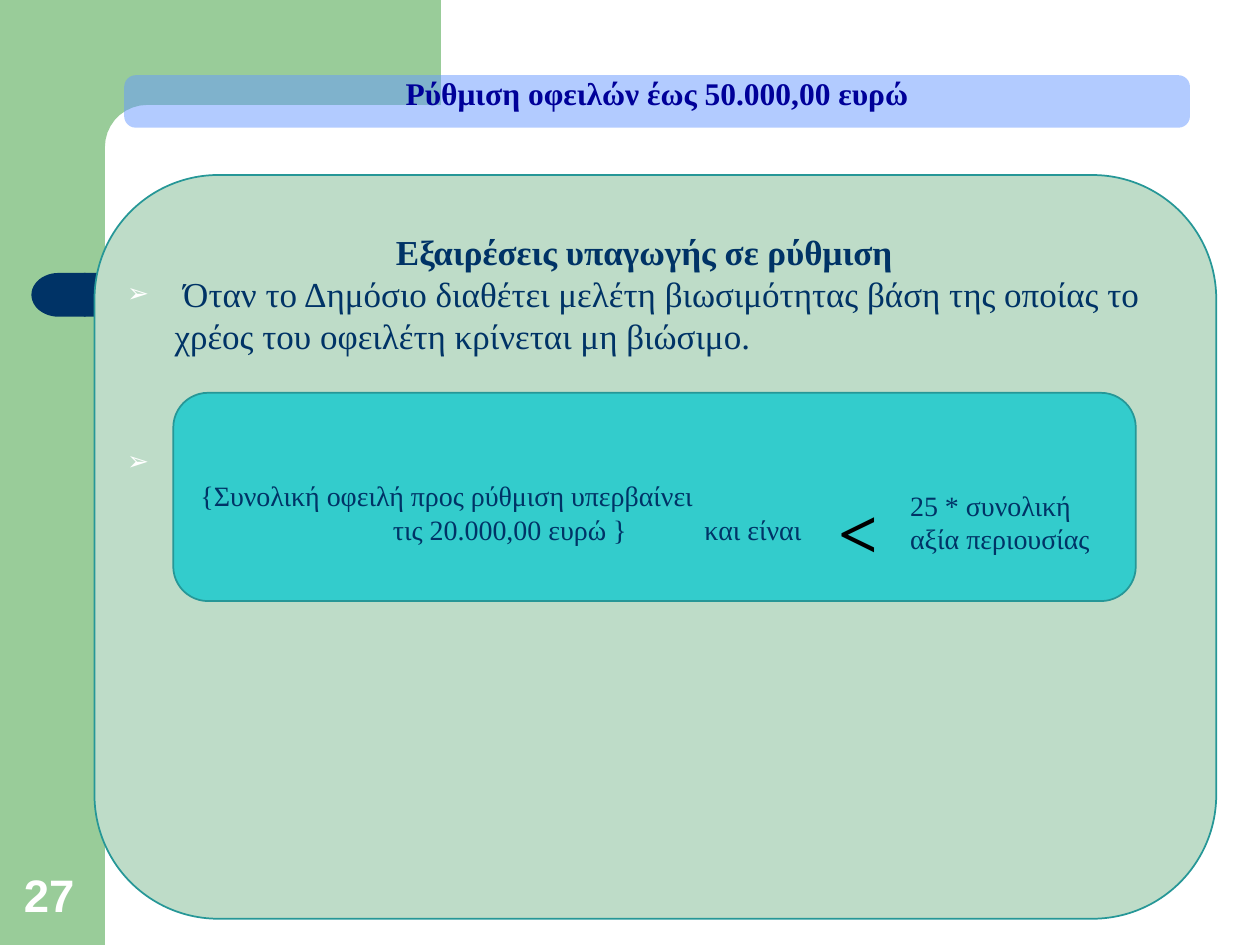
import math
import lxml.etree
import pptx
import pptx.dml.color
import pptx.enum.shapes
import pptx.enum.text
import pptx.oxml.ns
import pptx.util

Pt = pptx.util.Pt
Shape = pptx.enum.shapes.MSO_SHAPE
Align = pptx.enum.text.PP_ALIGN
Anchor = pptx.enum.text.MSO_ANCHOR
SERIF = "Times New Roman"
NAVY, GREEN, TEAL = "003366", "99CC99", "269797"


def color(hex_text):
    return pptx.dml.color.RGBColor.from_string(hex_text)


def add_child(parent, tag, **attributes):
    child = lxml.etree.SubElement(parent, pptx.oxml.ns.qn(tag))
    for name, value in attributes.items():
        child.set(name, value)
    return child


def paint(shape, fill, line=None):
    shape.shadow.inherit = False
    shape.fill.solid()
    shape.fill.fore_color.rgb = color(fill)
    if line:
        shape.line.color.rgb = color(line)
        shape.line.width = Pt(1)
    else:
        shape.line.fill.background()


def add_block(page, kind, box, fill, line=None, rounding=None):
    shape = page.shapes.add_shape(kind, *map(Pt, box))
    paint(shape, fill, line)
    if rounding is not None:
        shape.adjustments[0] = rounding
    return shape


def style(para, size, font=SERIF, ink=NAVY, bold=False, align=Align.LEFT):
    para.alignment = align
    para.font.size = Pt(size)
    para.font.name = font
    para.font.bold = bold
    para.font.color.rgb = color(ink)


def add_text(page, box, lines, size, anchor=Anchor.TOP, **look):
    frame = page.shapes.add_textbox(*map(Pt, box)).text_frame
    frame.word_wrap = True
    frame.vertical_anchor = anchor
    for index, line in enumerate(lines):
        para = frame.paragraphs[0] if index == 0 else frame.add_paragraph()
        para.text = line
        style(para, size, **look)
    return frame


def move_placeholder(holder, box):
    holder.left, holder.top, holder.width, holder.height = map(Pt, box)
    holder.element.getparent().append(holder.element)
    frame = holder.text_frame
    frame.word_wrap = True
    frame.auto_size = pptx.enum.text.MSO_AUTO_SIZE.NONE
    frame.vertical_anchor = Anchor.TOP
    return frame


def draw_backdrop(page, box):
    left, top, width, height = box
    band, radius = 60, 24
    add_block(page, Shape.RECTANGLE, (left, top, band, height), GREEN)
    center = band + radius
    arc = [(left + center - radius * math.sin(math.radians(angle)),
            top + center - radius * math.cos(math.radians(angle)))
           for angle in range(0, 91, 10)]
    builder = page.shapes.build_freeform(Pt(left + 36), Pt(top), scale=1.0)
    outline = [(left + 252, top), (left + 252, top + band), *arc,
               (left + band, top + 92), (left + 36, top + 92)]
    builder.add_line_segments([(Pt(x), Pt(y)) for x, y in outline], close=True)
    paint(builder.convert_to_shape(), GREEN)
    add_block(page, Shape.ROUNDED_RECTANGLE, (left + 48, top + 156, 552, 25), NAVY, rounding=0)
    cap = add_block(page, Shape.FLOWCHART_DELAY, (left + 18, top + 156, 31, 25), NAVY)
    cap.element.spPr.find(pptx.oxml.ns.qn("a:xfrm")).set("flipH", "1")


def draw_title(page, box):
    bar = add_block(page, Shape.ROUNDED_RECTANGLE, box, "6699FF", rounding=0.22)
    tint = bar.element.spPr.find(".//" + pptx.oxml.ns.qn("a:srgbClr"))
    add_child(tint, "a:alpha", val="50000")
    para = move_placeholder(page.shapes.title, box).paragraphs[0]
    para.text = "Ρύθμιση οφειλών έως 50.000,00 ευρώ"
    para.line_spacing = 0.8
    style(para, 18, ink="000099", bold=True, align=Align.CENTER)


def draw_exceptions(page, box):
    left, top, width, height = box
    add_block(page, Shape.ROUNDED_RECTANGLE, box, "BEDCC8", TEAL)
    body = move_placeholder(page.placeholders[1], (left + 11.5, top + 28, 605.5, 391))
    entries = [
        ("Εξαιρέσεις υπαγωγής σε ρύθμιση", False, 0),
        (" Όταν το Δημόσιο διαθέτει μελέτη βιωσιμότητας βάση της οποίας "
         "το χρέος του οφειλέτη κρίνεται μη βιώσιμο.", True, 0),
        (" ", True, 48),
    ]
    for index, (text, bulleted, gap) in enumerate(entries):
        para = body.paragraphs[0] if index == 0 else body.add_paragraph()
        para.text = text
        para.space_before = Pt(gap)
        properties = para._p.get_or_add_pPr()
        properties.set("marL", str(Pt(27)))
        properties.set("indent", str(Pt(-27)))
        if bulleted:
            add_child(add_child(properties, "a:buClr"), "a:srgbClr", val="FFFFFF")
            add_child(properties, "a:buSzPct", val="75000")
            add_child(properties, "a:buFont", typeface="Arial")
            add_child(properties, "a:buChar", char="➢")
            style(para, 20)
        else:
            add_child(properties, "a:buNone")
            style(para, 20, bold=True, align=Align.CENTER)


def draw_formula(page, box):
    left, top, width, height = box
    add_block(page, Shape.FLOWCHART_ALTERNATE_PROCESS, box, "33CCCC", TEAL)
    debt = add_text(page, (left + 8.5, top + 45.5, 416, 46),
                    ["{Συνολική οφειλή προς ρύθμιση υπερβαίνει",
                     "\tτις 20.000,00 ευρώ }\tκαι είναι"], 16)
    properties = debt.paragraphs[1]._p.get_or_add_pPr()
    stops = lxml.etree.Element(pptx.oxml.ns.qn("a:tabLst"))
    for position in (110, 288):
        add_child(stops, "a:tab", pos=str(Pt(position)), algn="l")
    properties.find(pptx.oxml.ns.qn("a:defRPr")).addprevious(stops)
    add_text(page, (left + 414, top + 51, 136, 46), ["25 * συνολική αξία περιουσίας"], 16)
    add_text(page, (left + 369, top + 51, 45, 55), ["<"], 40,
             ink="000000", bold=True, align=Align.CENTER)


def main():
    deck = pptx.Presentation()
    deck.slide_width, deck.slide_height = Pt(720), Pt(540)
    page = deck.slides.add_slide(deck.slide_layouts[1])
    draw_backdrop(page, (0, 0, 720, 540))
    draw_exceptions(page, (54, 100, 641, 425))
    add_text(page, (6.5, 492, 46, 38), ["27"], 26, Anchor.BOTTOM,
             font="Arial", ink="FFFFFF", bold=True)
    draw_title(page, (71, 43, 609, 30))
    draw_formula(page, (99, 224.5, 550, 119))
    deck.save("out.pptx")


if __name__ == "__main__":
    main()
